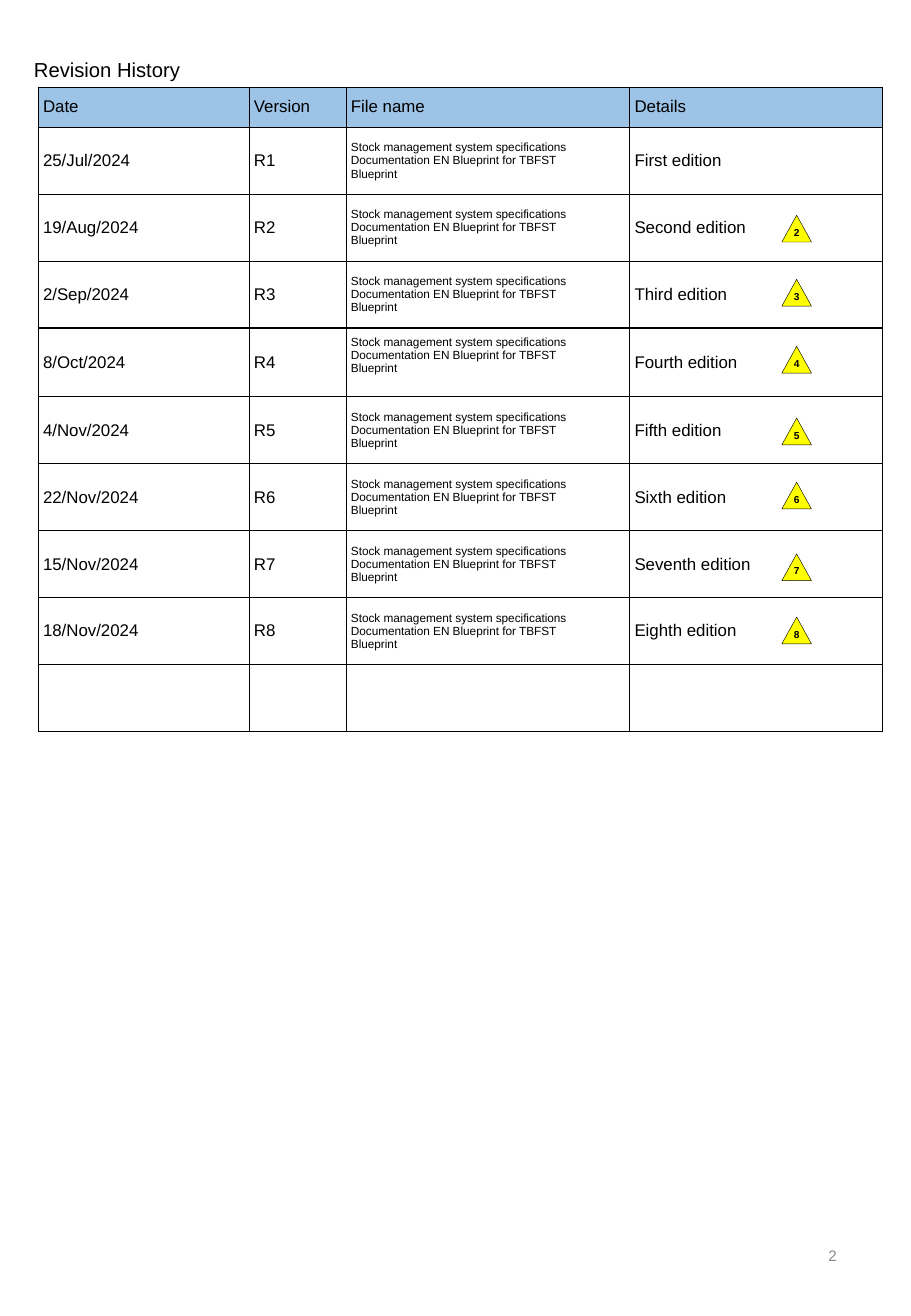
from lxml import etree
from pptx import Presentation
from pptx.dml.color import RGBColor
from pptx.enum.shapes import MSO_SHAPE
from pptx.enum.text import MSO_ANCHOR, MSO_AUTO_SIZE, PP_ALIGN
from pptx.oxml.ns import qn
from pptx.util import Cm, Pt

BLACK = RGBColor(0x00, 0x00, 0x00)
GRAY = RGBColor(0x8C, 0x8C, 0x8C)
HEADER_BLUE = RGBColor(0x9D, 0xC3, 0xE6)
YELLOW = RGBColor(0xFF, 0xFF, 0x00)
TRIANGLE = MSO_SHAPE.ISOSCELES_TRIANGLE
MIDDLE = MSO_ANCHOR.MIDDLE
NO_AUTOFIT = MSO_AUTO_SIZE.NONE
LEFT, CENTER, RIGHT = PP_ALIGN.LEFT, PP_ALIGN.CENTER, PP_ALIGN.RIGHT

FILE_NAME = "Stock management system specifications\nDocumentation EN Blueprint for TBFST\nBlueprint"
HEADINGS = ["Date", "Version", "File name", "Details"]
REVISIONS = [
    ("25/Jul/2024", "First"),
    ("19/Aug/2024", "Second"),
    ("2/Sep/2024", "Third"),
    ("8/Oct/2024", "Fourth"),
    ("4/Nov/2024", "Fifth"),
    ("22/Nov/2024", "Sixth"),
    ("15/Nov/2024", "Seventh"),
    ("18/Nov/2024", "Eighth"),
]
COLUMN_WIDTHS = [4.41, 2.03, 5.93, 5.28]
ROW_HEIGHTS = [0.84, 1.4, 1.4, 1.4, 1.44, 1.4, 1.4, 1.4, 1.4, 1.4]
MARKER_TOPS = [4.5, 5.84, 7.24, 8.74, 10.08, 11.58, 12.9]


def write(frame, text, size, color, align=LEFT, bold=False):
    frame.text = text
    frame.vertical_anchor = MIDDLE
    for para in frame.paragraphs:
        para.alignment = align
        para.font.name = "Arial"
        para.font.size = Pt(size)
        para.font.bold = bold
        para.font.color.rgb = color


def add_borders(cell):
    properties = cell._tc.get_or_add_tcPr()
    for position, side in enumerate(["a:lnL", "a:lnR", "a:lnT", "a:lnB"]):
        line = etree.Element(qn(side), w=str(Pt(0.75)))
        fill = etree.SubElement(line, qn("a:solidFill"))
        etree.SubElement(fill, qn("a:srgbClr"), val=str(BLACK))
        properties.insert(position, line)


deck = Presentation()
deck.slide_width = Cm(19.05)
deck.slide_height = Cm(27.51)
page = deck.slides.add_slide(deck.slide_layouts[5])

title = page.shapes.title
title.left, title.top, title.width, title.height = Cm(0.3), Cm(1.07), Cm(3.96), Cm(0.76)
title.text_frame.auto_size = NO_AUTOFIT
title.text_frame.margin_left = Cm(0.41)
write(title.text_frame, "Revision History", 12, BLACK)

rows = [HEADINGS]
for number, (date, ordinal) in enumerate(REVISIONS, start=1):
    rows.append([date, f"R{number}", FILE_NAME, f"{ordinal} edition"])
rows.append([""] * len(HEADINGS))

table = page.shapes.add_table(
    len(rows), len(HEADINGS), Cm(0.8), Cm(1.82), Cm(sum(COLUMN_WIDTHS)), Cm(sum(ROW_HEIGHTS))
).table
table.first_row = False
table.horz_banding = False
for column, width in zip(table.columns, COLUMN_WIDTHS):
    column.width = Cm(width)
for row, height, texts in zip(table.rows, ROW_HEIGHTS, rows):
    row.height = Cm(height)
    for cell, text in zip(row.cells, texts):
        write(cell.text_frame, text, 7 if text == FILE_NAME else 10, BLACK)
        cell.vertical_anchor = MIDDLE
        cell.margin_left, cell.margin_right = Cm(0.1), Cm(0.25)
        cell.margin_top = cell.margin_bottom = Cm(0.13)
        if texts is HEADINGS:
            cell.fill.solid()
            cell.fill.fore_color.rgb = HEADER_BLUE
        else:
            cell.fill.background()
        add_borders(cell)
table.cell(4, 2).margin_bottom = Cm(0.42)

number_box = page.shapes.add_textbox(Cm(13.46), Cm(25.5), Cm(4.29), Cm(1.47))
number_box.text_frame.word_wrap = True
write(number_box.text_frame, "2", 9, GRAY, RIGHT)

for number, top in enumerate(MARKER_TOPS, start=2):
    marker = page.shapes.add_shape(TRIANGLE, Cm(16.35), Cm(top), Cm(0.62), Cm(0.56))
    marker.shadow.inherit = False
    marker.fill.solid()
    marker.fill.fore_color.rgb = YELLOW
    marker.line.color.rgb = BLACK
    marker.line.width = Pt(0.25)
    frame = marker.text_frame
    frame.word_wrap = False
    frame.margin_top, frame.margin_bottom = Cm(0), Cm(0.13)
    write(frame, str(number), 6, BLACK, CENTER, bold=True)

deck.save("out.pptx")
